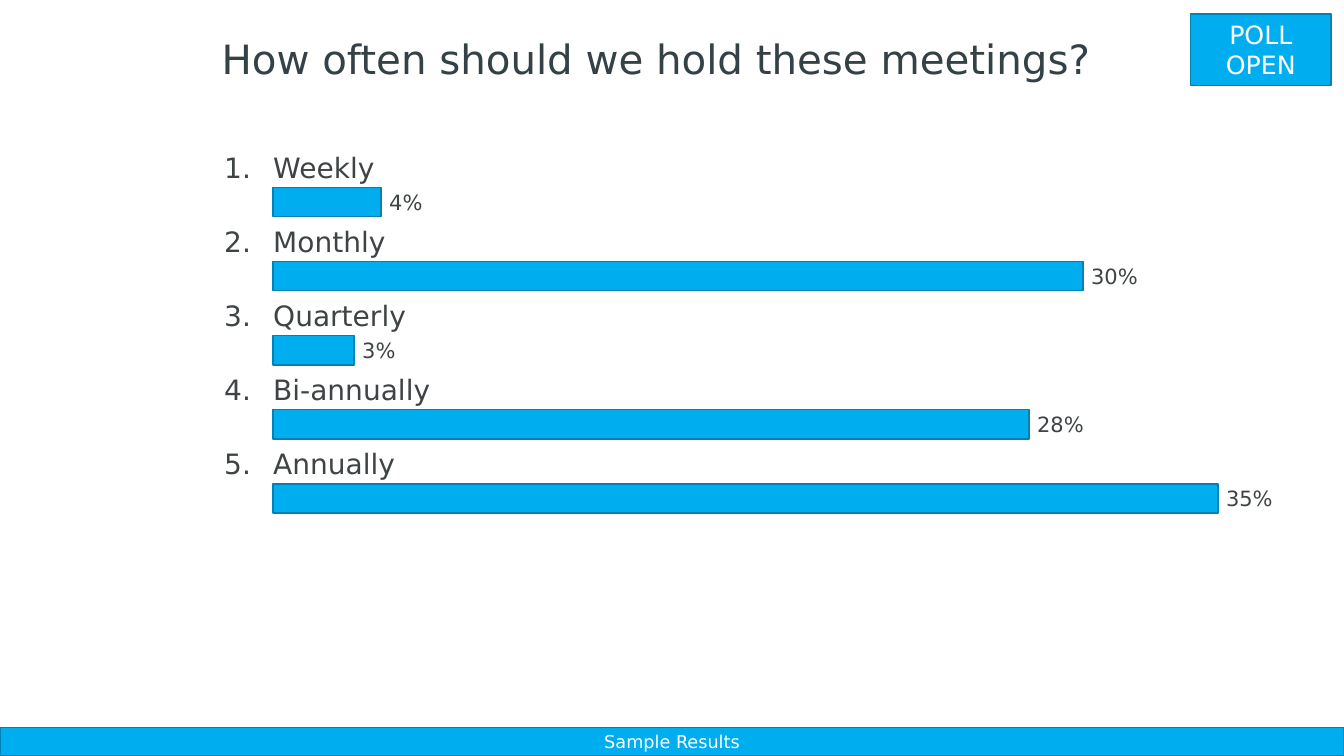
from pptx import Presentation
from pptx.dml.color import RGBColor
from pptx.enum import shapes, text
from pptx.util import Inches, Pt

BLUE = RGBColor(0x00, 0xAE, 0xEF)
BLUE_EDGE = RGBColor(0x00, 0x81, 0xB1)
WHITE = RGBColor(0xFF, 0xFF, 0xFF)
TITLE_COLOR = RGBColor(0x34, 0x41, 0x46)
BODY_COLOR = RGBColor(0x3E, 0x44, 0x45)
LEFT, CENTER, RIGHT = text.PP_ALIGN.LEFT, text.PP_ALIGN.CENTER, text.PP_ALIGN.RIGHT
TOP, MIDDLE = text.MSO_ANCHOR.TOP, text.MSO_ANCHOR.MIDDLE

prs = Presentation()
prs.slide_width, prs.slide_height = Inches(13.33), Inches(7.5)
s = prs.slides.add_slide(prs.slide_layouts[6])


def add_text(words, box, size, color=BODY_COLOR, align=LEFT, anchor=TOP,
             insets=(0.1, 0.05, 0.1, 0.05), wrap=True, sp=None):
    """Write words into sp, or into a new text box; insets run left, top, right, bottom."""
    sp = sp or s.shapes.add_textbox(*map(Inches, box))
    tf = sp.text_frame
    tf.word_wrap = wrap
    tf.vertical_anchor = anchor
    tf.margin_left, tf.margin_top, tf.margin_right, tf.margin_bottom = map(Inches, insets)
    p = tf.paragraphs[0]
    p.alignment = align
    r = p.add_run()
    r.text = words
    r.font.name = "DejaVu Sans"
    r.font.size = Pt(size)
    r.font.color.rgb = color


def add_blue_box(*box):
    sp = s.shapes.add_shape(shapes.MSO_SHAPE.RECTANGLE, *map(Inches, box))
    sp.shadow.inherit = False
    sp.fill.solid()
    sp.fill.fore_color.rgb = BLUE
    sp.line.color.rgb = BLUE_EDGE
    sp.line.width = Pt(1)
    return sp


footer = add_blue_box(0, 7.22, 13.33, 0.28)
add_text("Sample Results", None, 12.6, color=WHITE, align=CENTER, anchor=MIDDLE,
         wrap=False, sp=footer)

add_text("How often should we hold these meetings?", (2.1, 0.29, 9.52, 1.06), 28.8,
         color=TITLE_COLOR)

poll_status = add_blue_box(11.81, 0.14, 1.39, 0.71)
add_text("POLL OPEN", None, 18, color=WHITE, align=CENTER, sp=poll_status)

answers = [("Weekly", 4), ("Monthly", 30), ("Quarterly", 3),
           ("Bi-annually", 28), ("Annually", 35)]
NUMBER_LEFT, BAR_LEFT = 2.1, 2.71
FIRST_TOP, ROW_PITCH = 1.43, 0.735
LONGEST_BAR = 9.37
most_votes = max(percent for _, percent in answers)

for i, (answer, percent) in enumerate(answers):
    top = FIRST_TOP + i * ROW_PITCH
    bar_width = LONGEST_BAR * percent / most_votes
    add_text(f"{i + 1}.", (NUMBER_LEFT, top, BAR_LEFT - NUMBER_LEFT, 0.39), 20,
             align=RIGHT, insets=(0.1, 0.06, 0.22, 0), wrap=False)
    add_text(answer, (BAR_LEFT, top, 10.08, 0.42), 20, insets=(0, 0.06, 0, 0.03))
    label_width = 0.44 if percent < 10 else 0.58
    add_text(f"{percent}%", (BAR_LEFT + bar_width, top + 0.45, label_width, 0.25), 15,
             insets=(0.08, 0, 0, 0), wrap=False)
    add_blue_box(BAR_LEFT, top + 0.43, bar_width, 0.29)

prs.save("out.pptx")
